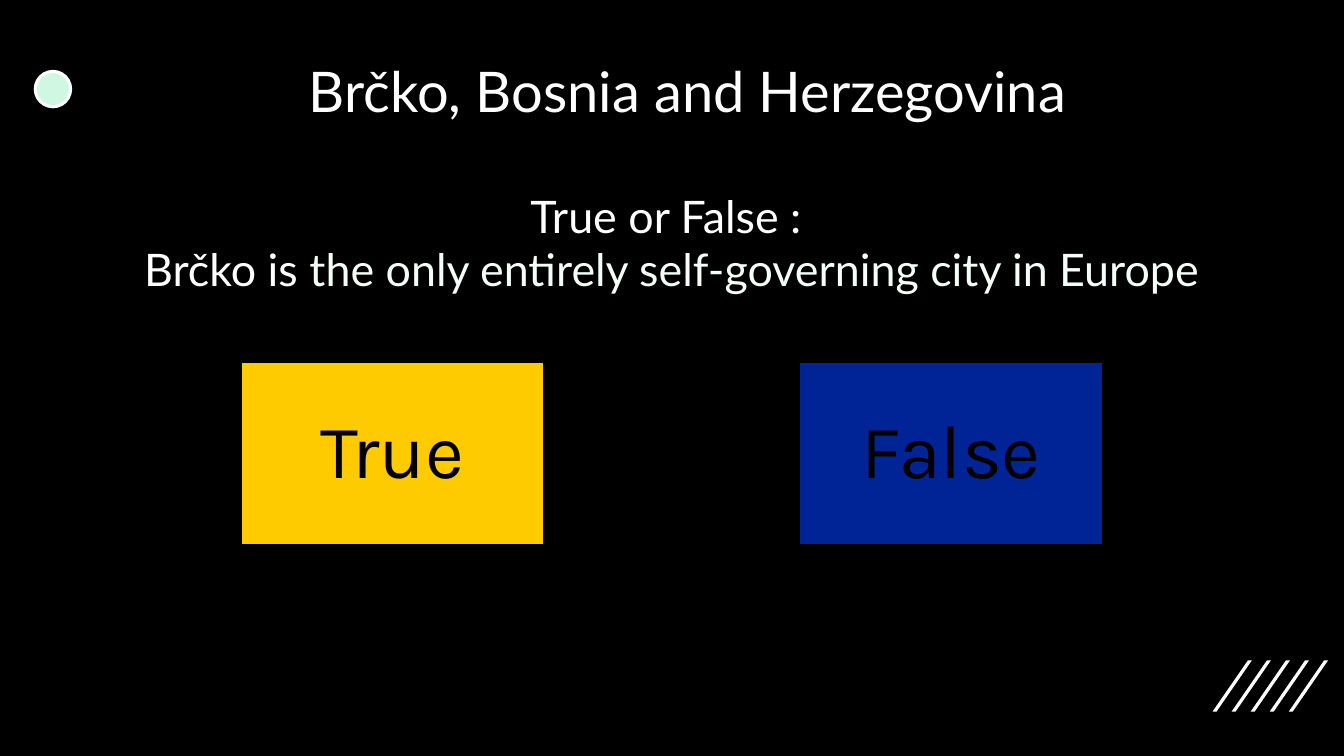
from pptx import Presentation
from pptx import util as u
from pptx.dml.color import RGBColor
from pptx.enum import shapes, text


def paint(fill, color):
    fill.solid()
    fill.fore_color.rgb = RGBColor.from_string(color)


def add_span(para, words, font, size, color):
    span = para.add_run()
    span.text = words
    span.font.name = font
    span.font.size = u.Pt(size)
    paint(span.font.fill, color)
    para.alignment = text.PP_ALIGN.CENTER


deck = Presentation()
deck.slide_width, deck.slide_height = u.Cm(33.87), u.Cm(19.05)
page = deck.slides.add_slide(deck.slide_layouts.get_by_name("Title Only"))
paint(page.background.fill, "000000")

# Decoration: five slanted strokes and a dot
for i in range(5):
    left = 30.56 + 0.48 * i
    corners = [(left + 0.1, 17.93), (left, 17.93), (left + 0.89, 16.64), (left + 0.99, 16.64)]
    points = [(u.Cm(x), u.Cm(y)) for x, y in corners]
    outline = page.shapes.build_freeform(*points[0])
    outline.add_line_segments(points[1:], close=True)
    stroke = outline.convert_to_shape()
    stroke.shadow.inherit = False
    paint(stroke.fill, "FFFFFF")
    stroke.line.fill.background()

dot = page.shapes.add_shape(shapes.MSO_SHAPE.OVAL, u.Cm(0.89), u.Cm(1.8), u.Cm(0.89), u.Cm(0.89))
dot.shadow.inherit = False
paint(dot.fill, "CFF7E1")
paint(dot.line.fill, "FFFFFF")
dot.line.width = u.Pt(2.25)

# Title
title = page.shapes.title
title.left, title.top, title.width, title.height = u.Cm(7.21), u.Cm(1.3), u.Cm(20.22), u.Cm(1.96)
title.text_frame.auto_size = text.MSO_AUTO_SIZE.NONE
title.text_frame.vertical_anchor = text.MSO_ANCHOR.TOP
add_span(title.text_frame.paragraphs[0], "Brčko, Bosnia and Herzegovina", "Lato", 40, "FFFFFF")

# Answer cards
for answer, left, color in [("True", 6.07, "FECB00"), ("False", 20.15, "002395")]:
    card = page.shapes.add_shape(
        shapes.MSO_SHAPE.RECTANGLE, u.Cm(left), u.Cm(9.14), u.Cm(7.64), u.Cm(4.58))
    card.shadow.inherit = False
    paint(card.fill, color)
    paint(card.line.fill, "000000")
    card.line.width = u.Pt(1)
    frame = card.text_frame
    frame.margin_left = frame.margin_right = frame.margin_top = frame.margin_bottom = u.Cm(0.58)
    frame.vertical_anchor = text.MSO_ANCHOR.MIDDLE
    para = frame.paragraphs[0]
    para.line_spacing = 0.9
    add_span(para, answer, "Karla", 54, "000000")

# Question
question = page.shapes.add_textbox(u.Cm(-0.2), u.Cm(4.62), u.Cm(34.26), u.Cm(3))
question.text_frame.word_wrap = True
add_span(question.text_frame.paragraphs[0], "True or False : ", "Lato", 32, "FFFFFF")
claim = question.text_frame.add_paragraph()
add_span(claim, "Brčko is ", "Lato", 32, "FFFFFF")
add_span(claim, "the only entirely self-governing city in Europe", "Lato", 32, "F3FFF8")

deck.save("out.pptx")
